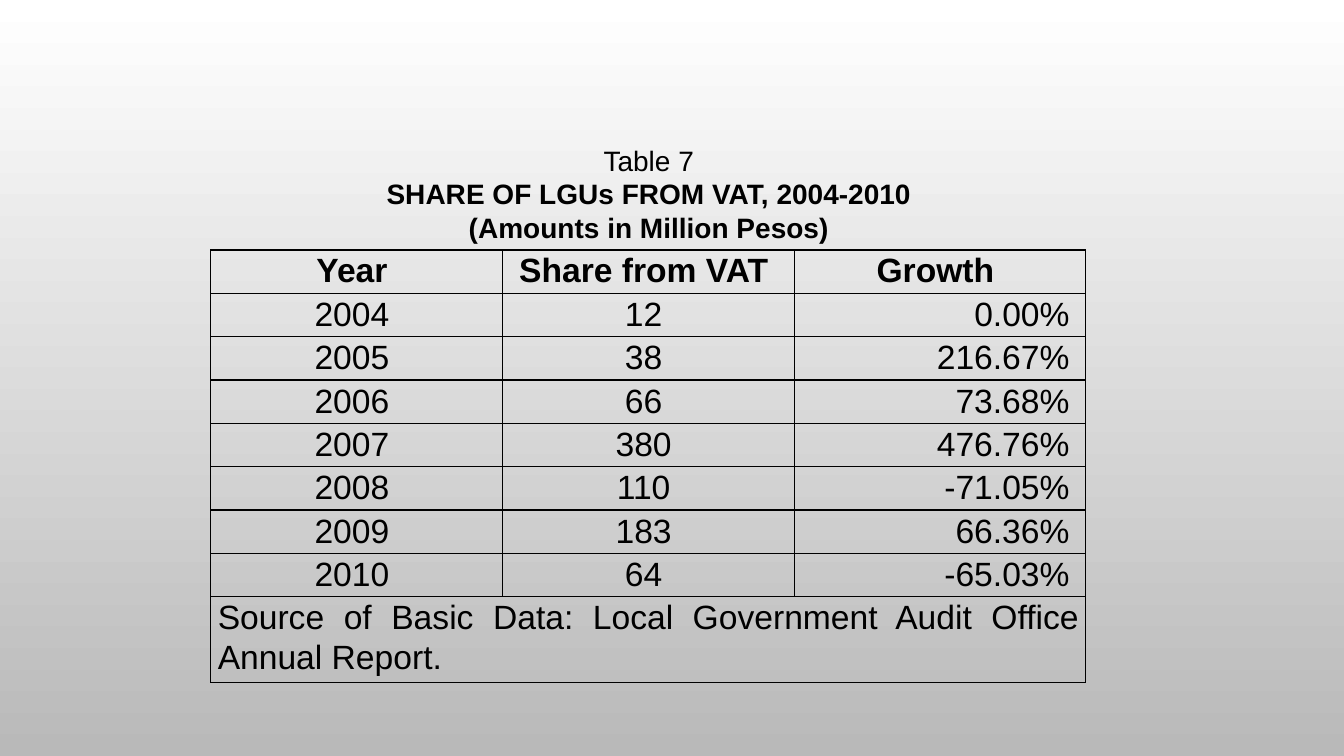
from lxml.etree import SubElement
from pptx import Presentation
from pptx.dml.color import RGBColor
from pptx.enum.text import MSO_ANCHOR, MSO_AUTO_SIZE, PP_ALIGN
from pptx.oxml import parse_xml
from pptx.oxml.ns import nsdecls
from pptx.util import Inches, Pt

HUES = {"ink": "000000", "top": "FFFFFF", "base": "B9B9B9"}
FONT = "Arial"
ROWS = [
    ("Year", "Share from VAT", "Growth"),
    ("2004", "12", "0.00%"),
    ("2005", "38", "216.67%"),
    ("2006", "66", "73.68%"),
    ("2007", "380", "476.76%"),
    ("2008", "110", "-71.05%"),
    ("2009", "183", "66.36%"),
    ("2010", "64", "-65.03%"),
    ("Source of Basic Data: Local Government Audit Office Annual Report.", "", ""),
]
LAST = len(ROWS) - 1
LEFT, TOP, WIDE, STEP = 2.09, 2.48, 8.68, 0.43


def style(par, size, bold, align):
    par.alignment = align
    for run in par.runs:
        run.font.name = FONT
        run.font.size = Pt(size)
        run.font.bold = bold
        run.font.color.rgb = RGBColor.from_string(HUES["ink"])


def border(cell):
    props = cell._tc.get_or_add_tcPr()
    for spot, side in enumerate("LRTB"):
        props.insert(spot, parse_xml(
            f'<a:ln{side} {nsdecls("a")} w="12700"><a:solidFill>'
            f'<a:srgbClr val="{HUES["ink"]}"/></a:solidFill></a:ln{side}>'))


# Slide with a gradient from top to bottom
deck = Presentation()
deck.slide_width, deck.slide_height = Inches(13.33), Inches(7.5)
slide = deck.slides.add_slide(deck.slide_layouts[5])
fill = slide.background.fill
fill.gradient()
fill.gradient_angle = 270
for stop, hue in zip(fill.gradient_stops, ("top", "base")):
    stop.color.rgb = RGBColor.from_string(HUES[hue])

# Table caption
title = slide.shapes.title
title.left, title.top = Inches(3.1), Inches(1.37)
title.width, title.height = Inches(6.67), Inches(1.11)
frame = title.text_frame
frame.text = "Table 7\nSHARE OF LGUs FROM VAT, 2004-2010\n(Amounts in Million Pesos)"
frame.word_wrap = True
frame.auto_size = MSO_AUTO_SIZE.NONE
frame.vertical_anchor = MSO_ANCHOR.TOP
for num, par in enumerate(frame.paragraphs):
    style(par, 20, num > 0, PP_ALIGN.CENTER)

# Table grid: equal columns, with a double row for the source note
table = slide.shapes.add_table(
    len(ROWS), 3, Inches(LEFT), Inches(TOP), Inches(WIDE),
    Inches(STEP * (len(ROWS) + 1))).table
table.horz_banding = False
for row in table.rows:
    row.height = Inches(STEP)
table.rows[LAST].height = Inches(2 * STEP - 0.01)
table.cell(LAST, 0).merge(table.cell(LAST, 2))

# Table cells
for r, texts in enumerate(ROWS):
    for c, text in enumerate(texts):
        cell = table.cell(r, c)
        cell.fill.background()
        border(cell)
        cell.margin_left = cell.margin_right = Inches(0.07)
        cell.margin_top = cell.margin_bottom = 0
        if not text:
            continue
        cell.text_frame.text = f"{text} "
        par = cell.text_frame.paragraphs[0]
        par.line_spacing = 1.07
        if r == LAST:
            align = PP_ALIGN.JUSTIFY
        elif r and c == 2:
            align = PP_ALIGN.RIGHT
        else:
            align = PP_ALIGN.CENTER
        style(par, 24, r == 0, align)

deck.save("out.pptx")
